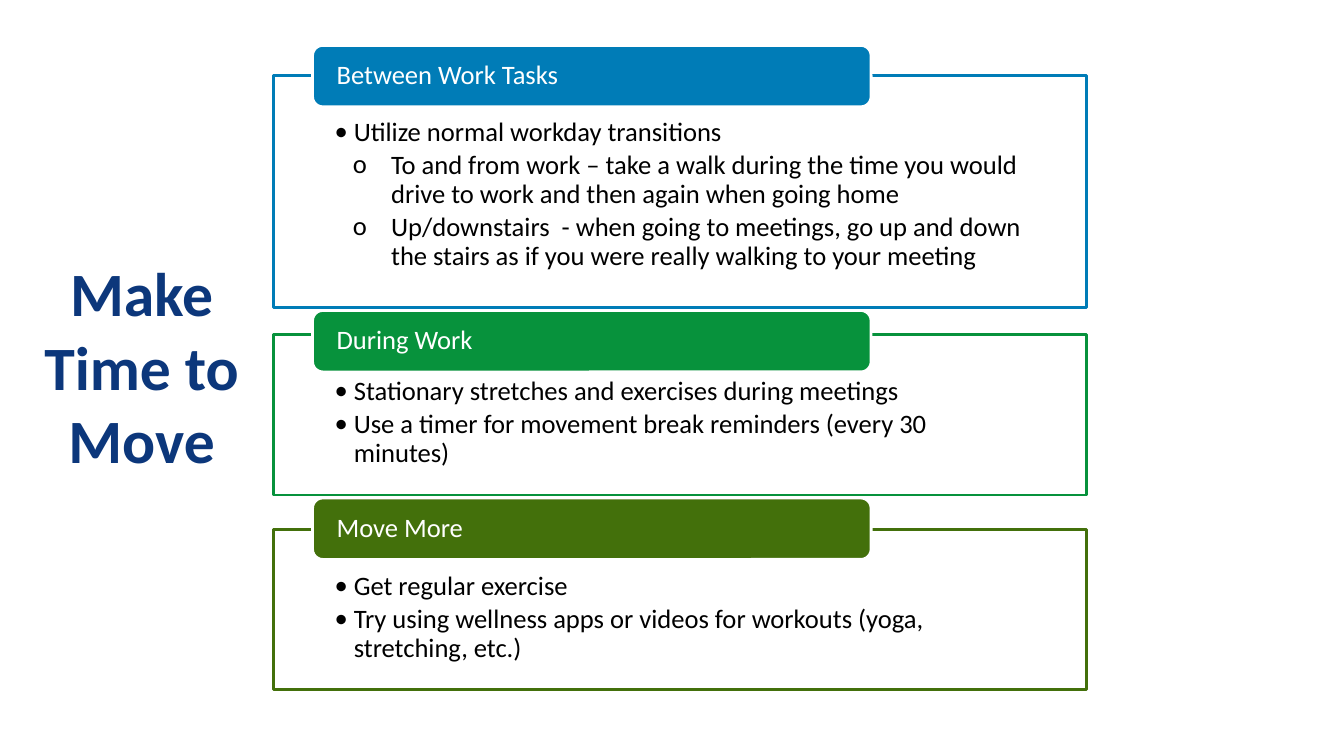
from dataclasses import dataclass

from lxml import etree
from pptx import Presentation
from pptx import util as u
from pptx.dml.color import RGBColor
from pptx.enum import shapes, text
from pptx.oxml import ns

PX = 9144


@dataclass(frozen=True)
class Theme:
    font: str = "Calibri"
    title_size: int = 44
    body_size: int = 19
    navy: str = "0C377B"
    blue: str = "007CB7"
    green: str = "07923C"
    olive: str = "43700B"
    white: str = "FFFFFF"
    black: str = "000000"
    line_width: int = 2
    line_spacing: float = 0.9
    panel_opacity: int = 90


THEME = Theme()
BULLETS = {1: ("•", 19, -19), 2: ("o", 56, -38)}

SECTIONS = [
    ("Between Work Tasks", THEME.blue, 45, 75, 230, [
        (1, "Utilize normal workday transitions"),
        (2, "To and from work – take a walk during the time you would "
            "drive to work and then again when going home"),
        (2, "Up/downstairs  - when going to meetings, go up and down "
            "the stairs as if you were really walking to your meeting"),
    ]),
    ("During Work", THEME.green, 308, 332, 159, [
        (1, "Stationary stretches and exercises during meetings"),
        (1, "Use a timer for movement break reminders (every 30 minutes)"),
    ]),
    ("Move More", THEME.olive, 494, 525, 159, [
        (1, "Get regular exercise"),
        (1, "Try using wellness apps or videos for workouts (yoga, stretching, etc.)"),
    ]),
]


def px(*lengths):
    return [u.Emu(length * PX) for length in lengths]


def set_font(para, size, color, bold=False):
    para.font.name = THEME.font
    para.font.size = u.Pt(size)
    para.font.bold = bold
    para.font.color.rgb = RGBColor.from_string(color)


def set_frame(frame, anchor, insets):
    frame.word_wrap = True
    frame.vertical_anchor = anchor
    (frame.margin_left, frame.margin_top,
     frame.margin_right, frame.margin_bottom) = px(*insets)


def add_bullet(para, level):
    mark, margin, indent = BULLETS[level]
    para.level = level
    props = para._p.get_or_add_pPr()
    props.set("marL", str(margin * PX))
    props.set("indent", str(indent * PX))
    etree.SubElement(props, ns.qn("a:buFont"), typeface=THEME.font)
    etree.SubElement(props, ns.qn("a:buChar"), char=mark)


def add_block(page, kind, area, fill, line):
    block = page.shapes.add_shape(kind, *px(*area))
    block.shadow.inherit = False
    block.fill.solid()
    block.fill.fore_color.rgb = RGBColor.from_string(fill)
    block.line.color.rgb = RGBColor.from_string(line)
    block.line.width = u.Pt(THEME.line_width)
    return block


def add_title(page, wording):
    box = page.shapes.add_textbox(*px(30, 55, 221, 615))
    set_frame(box.text_frame, text.MSO_ANCHOR.MIDDLE, (10, 5, 10, 5))
    para = box.text_frame.paragraphs[0]
    para.text = wording
    para.alignment = text.PP_ALIGN.CENTER
    set_font(para, THEME.title_size, THEME.navy, bold=True)


def add_panel(page, top, height, color, items):
    panel = add_block(page, shapes.MSO_SHAPE.RECTANGLE,
                      (271, top, 807, height), THEME.white, color)
    white = panel.fill._xPr.find(ns.qn("a:solidFill"))[0]
    etree.SubElement(white, ns.qn("a:alpha"), val=str(THEME.panel_opacity * 1000))
    frame = panel.text_frame
    set_frame(frame, text.MSO_ANCHOR.TOP, (61, 43, 61, 15))
    for index, (level, wording) in enumerate(items):
        para = frame.add_paragraph() if index else frame.paragraphs[0]
        para.text = wording
        para.alignment = text.PP_ALIGN.LEFT
        para.line_spacing = THEME.line_spacing
        para.space_after = u.Pt(3)
        add_bullet(para, level)
        set_font(para, THEME.body_size, THEME.black)


def add_tab(page, top, color, wording):
    tab = add_block(page, shapes.MSO_SHAPE.ROUNDED_RECTANGLE,
                    (310, top, 554, 61), color, THEME.white)
    set_frame(tab.text_frame, text.MSO_ANCHOR.MIDDLE, (21, 0, 21, 0))
    para = tab.text_frame.paragraphs[0]
    para.text = wording
    para.alignment = text.PP_ALIGN.LEFT
    para.line_spacing = THEME.line_spacing
    set_font(para, THEME.body_size, THEME.white)


def main():
    deck = Presentation()
    deck.slide_width, deck.slide_height = px(1333, 750)
    page = deck.slides.add_slide(deck.slide_layouts[6])
    add_title(page, "Make Time to Move")
    for heading, color, tab_top, panel_top, panel_height, items in SECTIONS:
        add_panel(page, panel_top, panel_height, color, items)
        add_tab(page, tab_top, color, heading)
    deck.save("out.pptx")


if __name__ == "__main__":
    main()
